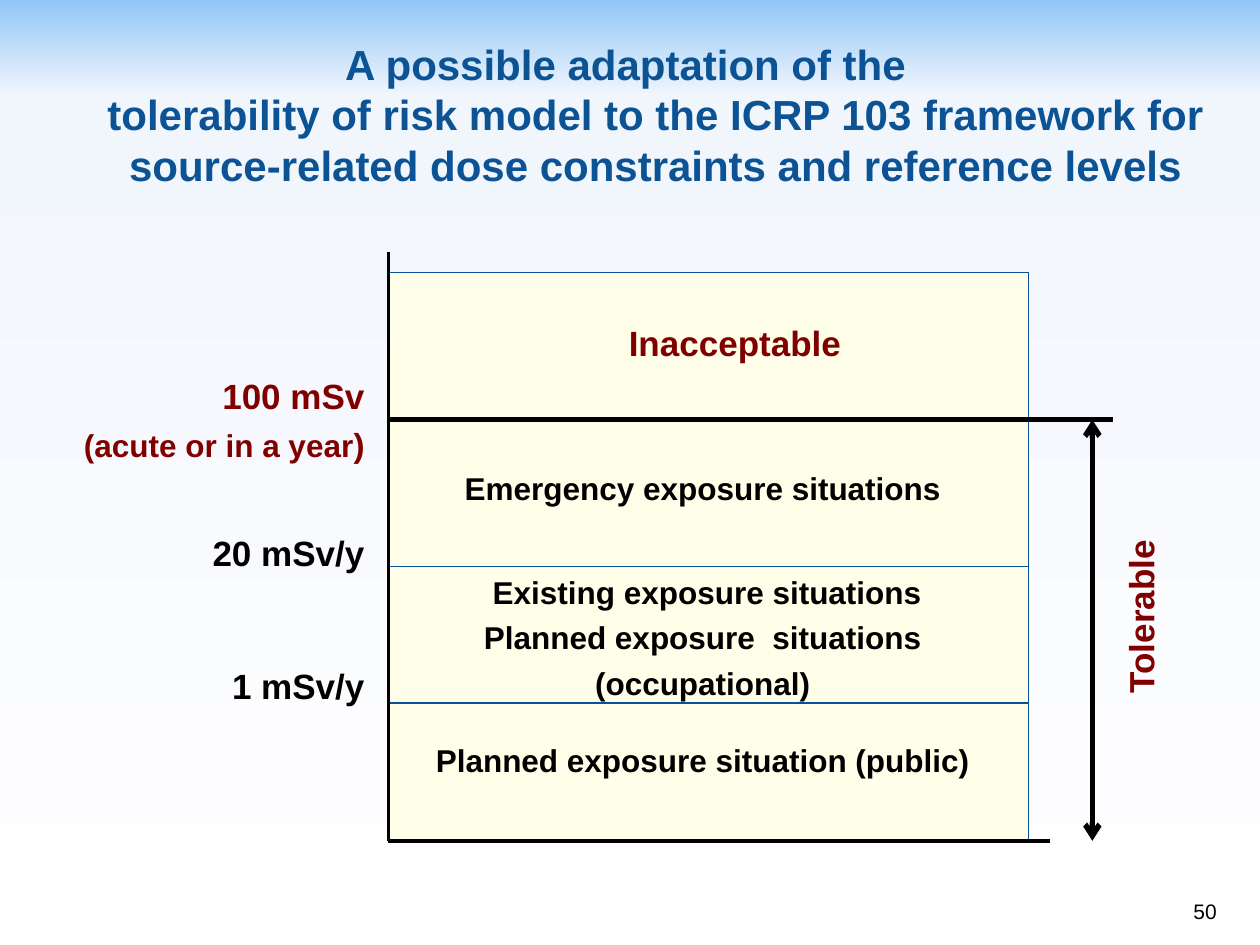
from copy import deepcopy

from lxml.etree import SubElement
from pptx import Presentation
from pptx.dml.color import RGBColor
from pptx.enum.shapes import MSO_CONNECTOR, MSO_SHAPE
from pptx.enum.text import MSO_ANCHOR, PP_ALIGN
from pptx.oxml.ns import qn
from pptx.util import Cm, Pt

BLACK, MAROON, BLUE, CREAM = "000000", "800000", "0B5394", "FFFEE8"
BANDS_LEFT, BANDS_TOP, BANDS_WIDTH = 7.83, 5.5, 12.9
BAND_HEIGHTS = (2.96, 2.96, 2.75, 2.75)
LIMIT_Y = BANDS_TOP + BAND_HEIGHTS[0]
BASE_Y = 16.95


def color(value):
    return RGBColor.from_string(value)


def paint_background(page):
    fill = page.background.fill
    fill.gradient()
    fill.gradient_angle = 270
    stop_list = page.element.find(".//" + qn("a:gsLst"))
    stop_list.append(deepcopy(stop_list[-1]))
    stops = ((0, "91C6F7"), (0.1, "F1F5FC"), (1, "FFFFFF"))
    for stop, (position, value) in zip(fill.gradient_stops, stops):
        stop.position = position
        stop.color.rgb = color(value)


def add_span(paragraph, text, size, value, bold=True):
    span = paragraph.add_run()
    span.text = text
    span.font.name = "Arial"
    span.font.size = Pt(size)
    span.font.bold = bold
    span.font.color.rgb = color(value)


def prepare_frame(shape, anchor=MSO_ANCHOR.TOP, right=0.05):
    frame = shape.text_frame
    frame.word_wrap = True
    frame.vertical_anchor = anchor
    frame.margin_left, frame.margin_right = 0, Cm(right)
    frame.margin_top = frame.margin_bottom = Cm(0.13)
    return frame


def write_lines(shape, lines, align, value=BLACK):
    frame = prepare_frame(shape)
    for index, spans in enumerate(lines):
        paragraph = frame.add_paragraph() if index else frame.paragraphs[0]
        paragraph.alignment = align
        if index:
            paragraph.space_before = Pt(4.4)
        for text, size in spans:
            add_span(paragraph, text, size, value)


def add_label(page, left, top, width, height, lines, align, value=BLACK):
    box = page.shapes.add_textbox(Cm(left), Cm(top), Cm(width), Cm(height))
    write_lines(box, lines, align, value)
    return box


def add_title(page, lines):
    box = page.shapes.add_textbox(Cm(0.03), Cm(0.43), Cm(25.4), Cm(3.61))
    frame = prepare_frame(box, MSO_ANCHOR.MIDDLE, 0)
    frame.margin_bottom = 0
    paragraph = frame.paragraphs[0]
    paragraph.alignment = PP_ALIGN.CENTER
    properties = paragraph._p.get_or_add_pPr()
    properties.set("marL", str(Cm(0.97)))
    properties.set("indent", str(Cm(-0.97)))
    for index, line in enumerate(lines):
        if index:
            paragraph.add_line_break()
        add_span(paragraph, line, 24, BLUE)


def add_page_number(page, number):
    box = page.shapes.add_textbox(Cm(19.5), Cm(17.48), Cm(5.28), Cm(1.27))
    frame = prepare_frame(box, MSO_ANCHOR.BOTTOM, 0.25)
    frame.paragraphs[0].alignment = PP_ALIGN.RIGHT
    add_span(frame.paragraphs[0], number, 12, BLACK, False)


def add_bands(page):
    bands = []
    top = BANDS_TOP
    for height in BAND_HEIGHTS:
        band = page.shapes.add_shape(MSO_SHAPE.RECTANGLE, Cm(BANDS_LEFT), Cm(top),
                                     Cm(BANDS_WIDTH), Cm(height))
        band.shadow.inherit = False
        band.fill.solid()
        band.fill.fore_color.rgb = color(CREAM)
        band.line.color.rgb = color("095295")
        band.line.width = Pt(0.75)
        bands.append(band)
        top += height
    return bands


def add_line(page, start, end, width, arrows=False):
    line = page.shapes.add_connector(MSO_CONNECTOR.STRAIGHT,
                                     *(Cm(value) for value in start + end))
    line.line.color.rgb = color(BLACK)
    line.line.width = Pt(width)
    if arrows:
        outline = line.line._get_or_add_ln()
        for end_name in ("a:headEnd", "a:tailEnd"):
            SubElement(outline, qn(end_name), type="arrow")
    SubElement(line._element.spPr, qn("a:effectLst"))


def main():
    deck = Presentation()
    deck.slide_width, deck.slide_height = Cm(25.4), Cm(19.05)
    page = deck.slides.add_slide(deck.slide_layouts[6])
    paint_background(page)
    add_title(page, (
        "A possible adaptation of the ",
        "tolerability of risk model to the ICRP 103 framework for",
        "source-related dose constraints and reference levels",
    ))
    add_page_number(page, "50")

    bands = add_bands(page)
    center, right = PP_ALIGN.CENTER, PP_ALIGN.RIGHT
    write_lines(bands[2], (
        [("Existing exposure situations", 18)],
        [("Planned exposure  situations ", 18)],
        [("(occupational) ", 18)],
    ), center)
    for left, top, width, text, size, value in (
        (9.96, 6.35, 9.96, "Inacceptable ", 20, MAROON),
        (BANDS_LEFT, 9.32, BANDS_WIDTH, "Emergency exposure situations ", 18, BLACK),
        (BANDS_LEFT, 14.81, BANDS_WIDTH, "Planned exposure situation (public) ", 18, BLACK),
    ):
        add_label(page, left, top, width, 1.45, ([(text, size)],), center, value)

    add_label(page, 0.84, 7.42, 6.56, 2.97, (
        [("100 mSv", 20)],
        [("(acute or in a year", 18), (")", 19)],
    ), right, MAROON)
    for top, text in ((10.59, "20 mSv/y"), (13.26, "1 mSv/y")):
        add_label(page, 3.6, top, 3.8, 1.45, ([(text, 20)],), right)

    tolerable = add_label(page, 19.35, 11.68, 7.62, 1.45, ([("Tolerable", 20)],),
                          center, MAROON)
    tolerable.rotation = 270

    add_line(page, (BANDS_LEFT, BASE_Y), (21.16, BASE_Y), 2)
    add_line(page, (BANDS_LEFT, 5.08), (BANDS_LEFT, BASE_Y), 2)
    add_line(page, (22.02, LIMIT_Y), (22.02, BASE_Y), 3, True)
    add_line(page, (BANDS_LEFT, LIMIT_Y), (22.43, LIMIT_Y), 3)
    deck.save("out.pptx")


if __name__ == "__main__":
    main()
